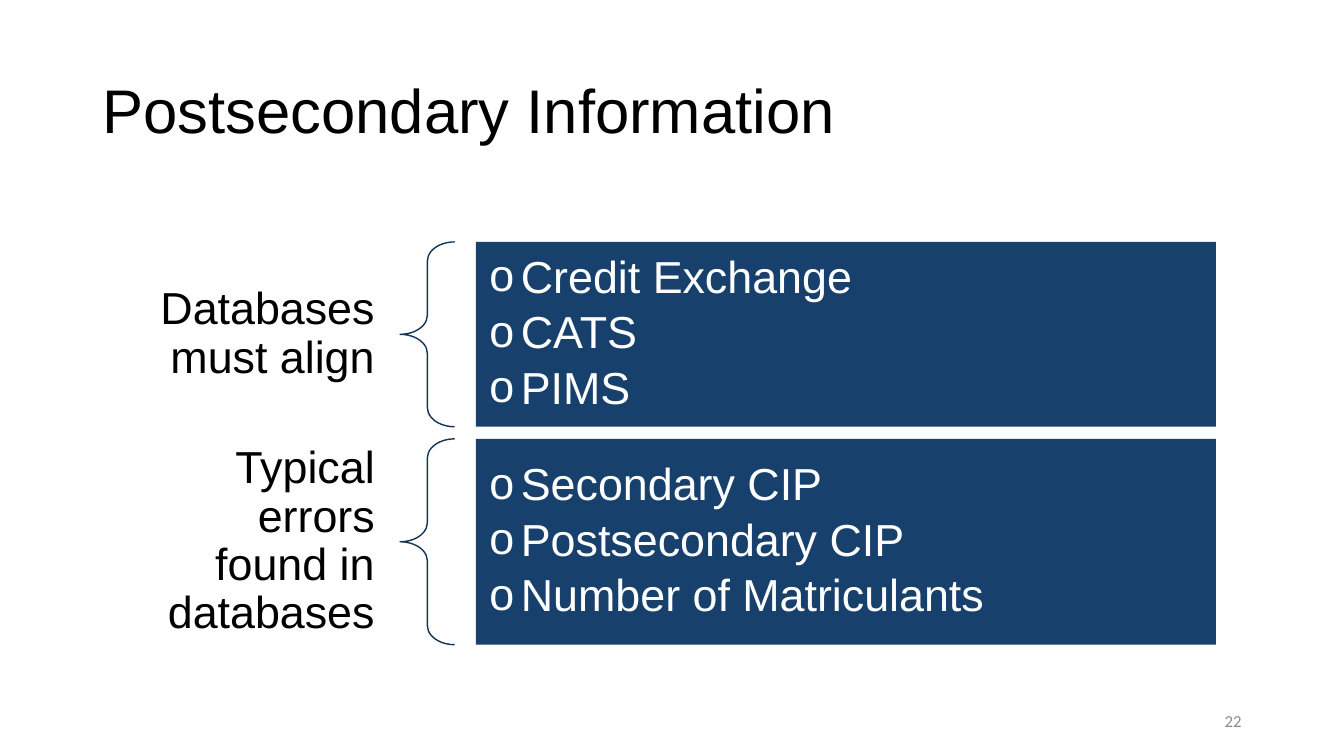
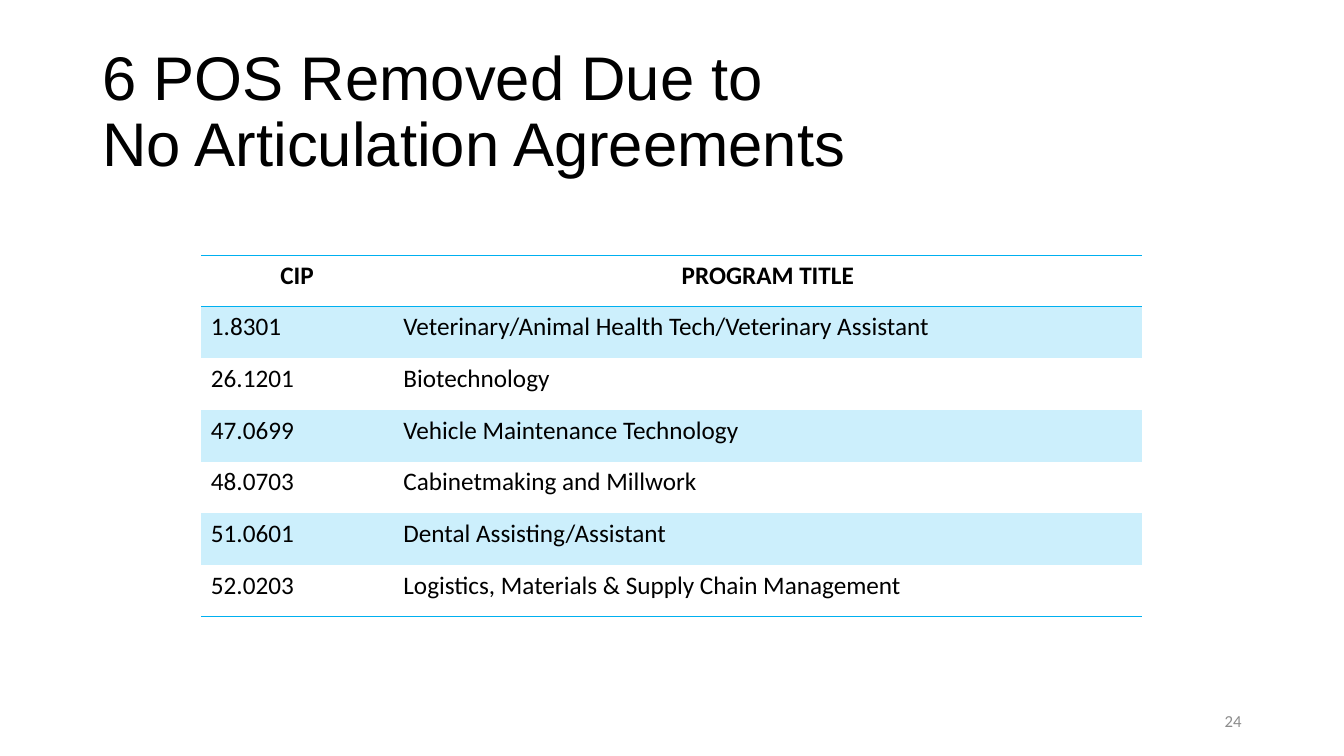
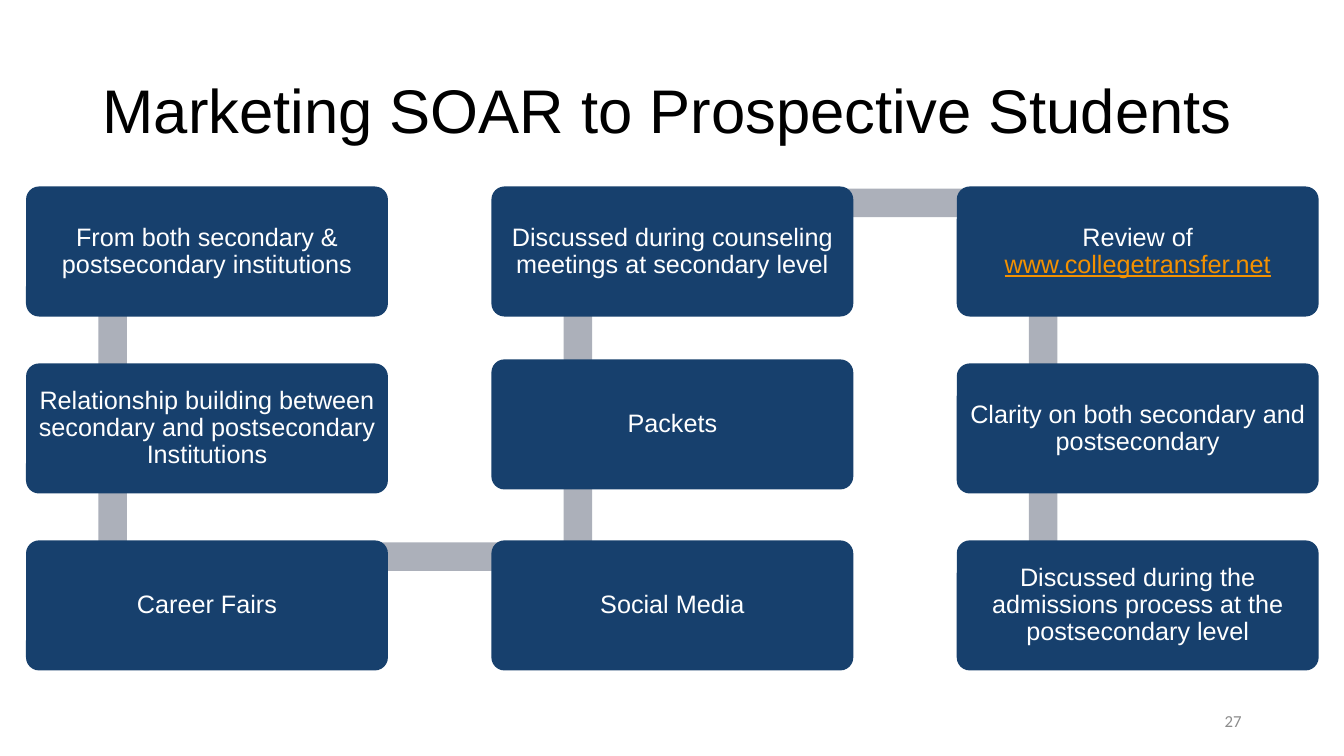
"""Build three slides on postsecondary information, removed programs and marketing."""
from itertools import pairwise

from lxml import etree
from pptx import Presentation
from pptx.dml.color import RGBColor as RGB
from pptx.enum.shapes import MSO_SHAPE as SHAPE
from pptx.enum.text import MSO_ANCHOR as ANCHOR, MSO_AUTO_SIZE as AUTO, PP_ALIGN as ALIGN
from pptx.oxml.ns import qn
from pptx.util import Pt

THEME = {
    "ink": "000000", "navy": "17406D", "brace": "123357", "white": "FFFFFF",
    "bar": "ACB0BA", "link": "F49100", "number": "8C8C8C",
    "rule": "00B0F0", "band": "CCEFFC",
    "font": "Arial", "table_font": "Calibri",
    "title": 44, "large": 32, "body": 18, "small": 12,
}
NO_STYLE = "{2D5ABB26-0587-4C30-8999-92F81FD0307C}"

DATABASES = [
    ("Databases must align", ["Credit Exchange", "CATS", "PIMS"], 172.8, 132),
    ("Typical errors found in databases",
     ["Secondary CIP", "Postsecondary CIP", "Number of Matriculants"], 313.5, 147),
]
PROGRAMS = [
    ("CIP", "PROGRAM TITLE"),
    ("1.8301", "Veterinary/Animal Health Tech/Veterinary Assistant"),
    ("26.1201", "Biotechnology"),
    ("47.0699", "Vehicle Maintenance Technology"),
    ("48.0703", "Cabinetmaking and Millwork"),
    ("51.0601", "Dental Assisting/Assistant"),
    ("52.0203", "Logistics, Materials & Supply Chain Management"),
]
LINK = "www.collegetransfer.net"
STEPS = [
    ("From both secondary & postsecondary institutions", 0, 0),
    ("Relationship building between secondary and postsecondary Institutions", 0, 1),
    ("Career Fairs", 0, 2),
    ("Social Media", 1, 2),
    ("Packets", 1, 1),
    ("Discussed during counseling meetings at secondary level", 1, 0),
    ("Review of " + LINK, 2, 0),
    ("Clarity on both secondary and postsecondary", 2, 1),
    ("Discussed during the admissions process at the postsecondary level", 2, 2),
]


def rgb(name):
    return RGB.from_string(THEME[name])


def apply(obj, **values):
    for name, value in values.items():
        setattr(obj, name, value)


def place(obj, left, top, width, height):
    apply(obj, left=Pt(left), top=Pt(top), width=Pt(width), height=Pt(height))


def add_run(p, text, size, color, font="font", **extra):
    r = p.add_run()
    r.text = text
    apply(r.font, size=Pt(THEME[size]), name=THEME[font], **extra)
    r.font.color.rgb = rgb(color)


def set_frame(tf, inset_x=7.2, inset_y=3.6):
    apply(tf, word_wrap=True, auto_size=AUTO.NONE, vertical_anchor=ANCHOR.MIDDLE,
          margin_left=Pt(inset_x), margin_right=Pt(inset_x),
          margin_top=Pt(inset_y), margin_bottom=Pt(inset_y))


def set_bullet(p):
    pPr = p._p.get_or_add_pPr()
    pPr.set("marL", str(Pt(22.5)))
    pPr.set("indent", str(-Pt(22.5)))
    etree.SubElement(pPr, qn("a:buFont")).set("typeface", THEME["font"])
    etree.SubElement(pPr, qn("a:buChar")).set("char", "o")


def write(tf, lines, size, color, align=ALIGN.LEFT, spacing=0.9, font="font",
          bullet=False):
    for i, line in enumerate(lines):
        p = tf.paragraphs[0] if i == 0 else tf.add_paragraph()
        if bullet:
            set_bullet(p)
            p.space_after = Pt(5)
        apply(p, alignment=align, line_spacing=spacing)
        add_run(p, line, size, color, font)


def add_text(s, box, lines, size, color, inset_x=7.2, **fmt):
    tf = s.shapes.add_textbox(*map(Pt, box)).text_frame
    set_frame(tf, inset_x)
    write(tf, lines, size, color, **fmt)


def add_shape(s, kind, box, fill):
    sp = s.shapes.add_shape(kind, *map(Pt, box))
    sp.shadow.inherit = False
    sp.line.fill.background()
    if fill:
        sp.fill.solid()
        sp.fill.fore_color.rgb = rgb(fill)
    else:
        sp.fill.background()
    return sp


def add_slide(prs, title, number):
    s = prs.slides.add_slide(prs.slide_layouts[5])
    place(s.shapes.title, 66, 28.8, 828, 104.4)
    tf = s.shapes.title.text_frame
    set_frame(tf)
    write(tf, title, "title", "ink")
    add_text(s, (678, 500.4, 216, 28.8), [str(number)], "small", "number",
             align=ALIGN.RIGHT, spacing=1.0, font="table_font")
    return s


def add_database_rows(s):
    for label, items, top, height in DATABASES:
        add_text(s, (91.4, top, 194.4, height), [label], "large", "ink", 18,
                 align=ALIGN.RIGHT)
        brace = add_shape(s, SHAPE.LEFT_BRACE, (285.8, top, 39, height), None)
        brace.adjustments[0] = 0.35
        brace.line.color.rgb = rgb("brace")
        brace.line.width = Pt(1)
        panel = add_shape(s, SHAPE.RECTANGLE, (340, top, 528.5, height), "navy")
        set_frame(panel.text_frame, 9.6, 9.6)
        write(panel.text_frame, items, "large", "white", bullet=True)


def add_border(cell, side):
    ln = etree.SubElement(cell._tc.get_or_add_tcPr(), qn("a:" + side), w=str(Pt(1)))
    fill = etree.SubElement(ln, qn("a:solidFill"))
    etree.SubElement(fill, qn("a:srgbClr")).set("val", THEME["rule"])


def add_program_table(s):
    widths, row_height = (137.5, 535), 36.9
    last = len(PROGRAMS) - 1
    frame = s.shapes.add_table(len(PROGRAMS), len(widths), Pt(143.5), Pt(182.3),
                               Pt(sum(widths)), Pt(row_height * len(PROGRAMS)))
    table = frame.table
    apply(table, first_row=False, horz_banding=False)
    table._tbl.tblPr.find(qn("a:tableStyleId")).text = NO_STYLE
    for column, width in zip(table.columns, widths):
        column.width = Pt(width)
    for i, values in enumerate(PROGRAMS):
        table.rows[i].height = Pt(row_height)
        for cell, value in zip(table.rows[i].cells, values):
            if i == 0:
                add_border(cell, "lnT")
            if i in (0, last):
                add_border(cell, "lnB")
            if i % 2:
                cell.fill.solid()
                cell.fill.fore_color.rgb = rgb("band")
            else:
                cell.fill.background()
            p = cell.text_frame.paragraphs[0]
            p.alignment = ALIGN.LEFT if i else ALIGN.CENTER
            add_run(p, value, "body", "ink", "table_font", bold=i == 0)


def add_step_path(s):
    lefts = [18.6 + 332.4 * i for i in range(3)]
    tops = [133.2 + 126.4 * i for i in range(3)]
    width, height, bar = 258.5, 92.9, 20.4
    spots = [(lefts[col], tops[row] - (2.9 if (col, row) == (1, 1) else 0))
             for _, col, row in STEPS]
    for (x1, y1), (x2, y2) in pairwise(spots):
        left, top = min(x1, x2) + 51.6, min(y1, y2) + 1.5
        add_shape(s, SHAPE.RECTANGLE,
                  (left, top, abs(x2 - x1) + bar, abs(y2 - y1) + bar), "bar")
    for (text, _, _), (left, top) in zip(STEPS, spots):
        box = add_shape(s, SHAPE.ROUNDED_RECTANGLE, (left, top, width, height), "navy")
        box.adjustments[0] = 0.1
        set_frame(box.text_frame, 5, 5)
        lead, link, _ = text.partition(LINK)
        write(box.text_frame, [lead], "body", "white", ALIGN.CENTER)
        if link:
            add_run(box.text_frame.paragraphs[0], link, "body", "link", underline=True)


def main():
    prs = Presentation()
    apply(prs, slide_width=Pt(960), slide_height=Pt(540))
    add_database_rows(add_slide(prs, ["Postsecondary Information"], 22))
    add_program_table(add_slide(
        prs, ["6 POS Removed Due to", "No Articulation Agreements"], 24))
    add_step_path(add_slide(prs, ["Marketing SOAR to Prospective Students"], 27))
    prs.save("out.pptx")


if __name__ == "__main__":
    main()
